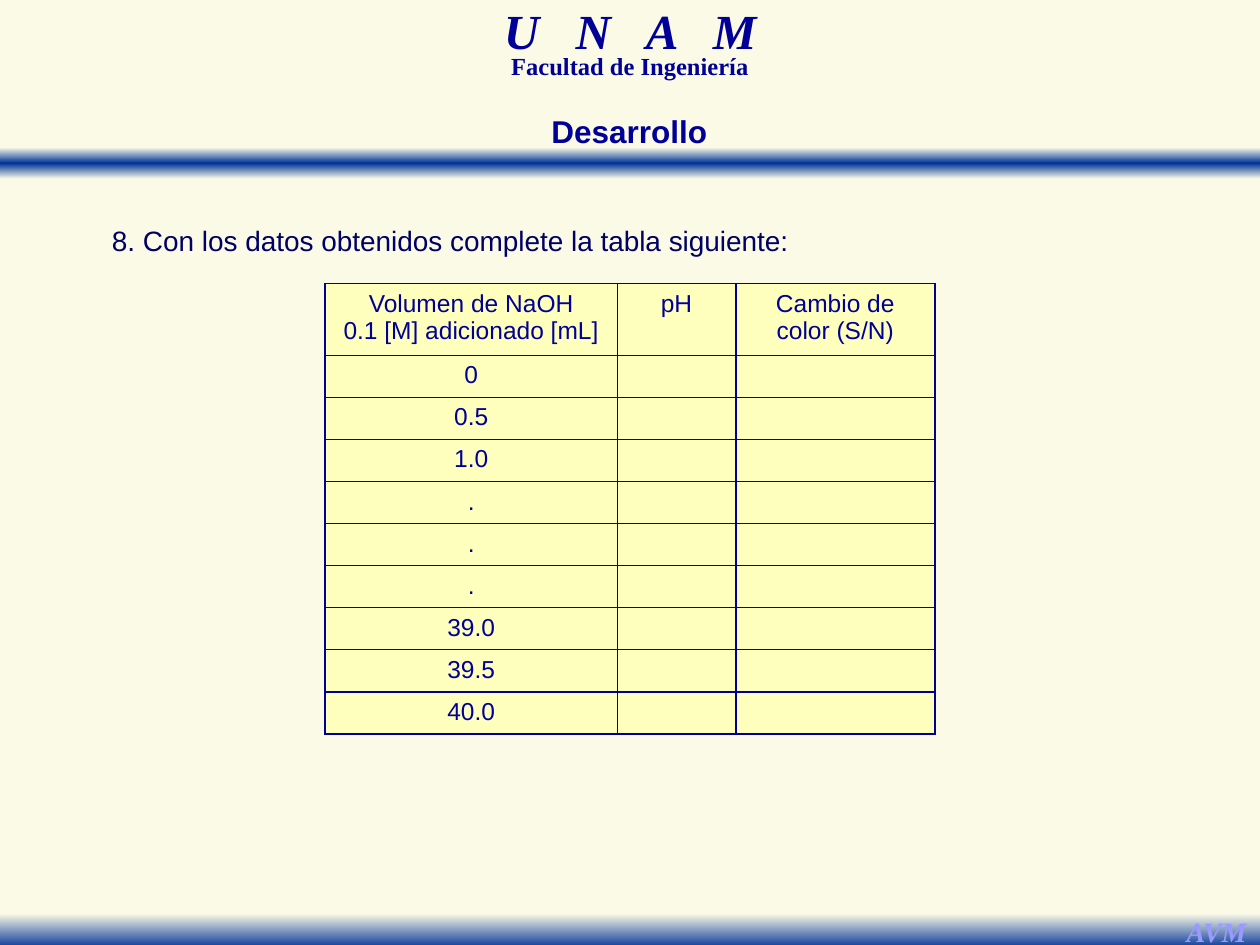
from dataclasses import dataclass

from lxml import etree
from pptx import Presentation
from pptx.dml.color import RGBColor
from pptx.enum.shapes import MSO_SHAPE
from pptx.enum.text import PP_ALIGN
from pptx.oxml.ns import qn
from pptx.util import Inches, Pt

RECTANGLE = MSO_SHAPE.RECTANGLE
CENTER = PP_ALIGN.CENTER
JUSTIFY = PP_ALIGN.JUSTIFY


@dataclass(frozen=True)
class Theme:
    background: str = "FAFAE6"
    band: str = "003399"
    heading: str = "000099"
    body: str = "000066"
    signature: str = "9999FF"
    cell: str = "FFFFBD"
    sans: str = "Arial"
    serif: str = "Times New Roman"
    school_size: int = 28
    title_size: int = 18
    body_size: int = 16
    small_size: int = 14
    border_width: float = 1


class SlideBuilder:
    def __init__(self, slide, theme):
        self.slide = slide
        self.theme = theme
        background = slide.background.fill
        background.solid()
        background.fore_color.rgb = RGBColor.from_string(theme.background)

    def run(self, paragraph, text, size, color, font, bold=False, italic=False, tracking=0):
        """Add one run; tracking is extra letter spacing in points."""
        run = paragraph.add_run()
        run.text = text
        run.font.size = Pt(size)
        run.font.name = font
        run.font.bold = bold
        run.font.italic = italic
        run.font.color.rgb = RGBColor.from_string(color)
        if tracking:
            run.font._element.set("spc", str(tracking * 100))

    def text(self, box, align=CENTER, line_spacing=None, wrap=True):
        """Add a text box and return its empty first paragraph."""
        frame = self.slide.shapes.add_textbox(*map(Inches, box)).text_frame
        frame.word_wrap = wrap
        paragraph = frame.paragraphs[0]
        paragraph.alignment = align
        if line_spacing:
            paragraph.line_spacing = line_spacing
        return paragraph

    def band(self, top, height, colors):
        """Add a full-width bar shaded downwards through evenly spaced colors."""
        bar = self.slide.shapes.add_shape(
            RECTANGLE, 0, Inches(top), Inches(10), Inches(height))
        bar.shadow.inherit = False
        bar.line.fill.background()
        bar.fill.gradient()
        bar.fill.gradient_angle = 270
        stops = bar._element.spPr.find(qn("a:gradFill")).find(qn("a:gsLst"))
        for stop in list(stops):
            stops.remove(stop)
        for index, color in enumerate(colors):
            position = 100000 * index // (len(colors) - 1)
            stop = etree.SubElement(stops, qn("a:gs"), pos=str(position))
            etree.SubElement(stop, qn("a:srgbClr"), val=color)

    def border(self, cell):
        properties = cell._tc.get_or_add_tcPr()
        for index, side in enumerate(("lnL", "lnR", "lnT", "lnB")):
            line = etree.Element(qn(f"a:{side}"), w=str(Pt(self.theme.border_width)))
            fill = etree.SubElement(line, qn("a:solidFill"))
            etree.SubElement(fill, qn("a:srgbClr"), val=self.theme.heading)
            properties.insert(index, line)

    def cell(self, cell, lines):
        theme = self.theme
        cell.fill.solid()
        cell.fill.fore_color.rgb = RGBColor.from_string(theme.cell)
        self.border(cell)
        frame = cell.text_frame
        for index, line in enumerate(lines):
            paragraph = frame.paragraphs[0] if index == 0 else frame.add_paragraph()
            paragraph.alignment = CENTER
            self.run(paragraph, line, theme.small_size, theme.heading, theme.sans)
        if not lines:
            # Keeps the empty row from growing to the default type size
            etree.SubElement(frame.paragraphs[0]._p, qn("a:endParaRPr"),
                             sz=str(theme.small_size * 100))

    def table(self, left, top, widths, heights, rows):
        table = self.slide.shapes.add_table(
            len(rows), len(widths), Inches(left), Inches(top),
            Inches(sum(widths)), Inches(sum(heights))).table
        table.first_row = False
        table.horz_banding = False
        for column, width in zip(table.columns, widths):
            column.width = Inches(width)
        for row, height, contents in zip(table.rows, heights, rows):
            row.height = Inches(height)
            for cell, lines in zip(row.cells, contents):
                self.cell(cell, lines)


def main():
    deck = Presentation()
    deck.slide_width, deck.slide_height = Inches(10), Inches(7.5)
    theme = Theme()
    builder = SlideBuilder(deck.slides.add_slide(deck.slide_layouts[6]), theme)

    builder.band(1.17, 0.25, [theme.background, theme.band, theme.background])
    builder.band(7.25, 0.28, [theme.background, theme.band])

    school = builder.text((3.04, 0.08, 3.92, 0.43), line_spacing=0.7)
    for letters, tracking in (("U N A ", 7), ("M", 0)):
        builder.run(school, letters, theme.school_size, theme.heading, theme.serif,
                    bold=True, italic=True, tracking=tracking)
    faculty = builder.text((3.21, 0.42, 3.58, 0.26), line_spacing=0.7)
    builder.run(faculty, "Facultad de Ingeniería", theme.small_size, theme.heading,
                theme.serif, bold=True)
    signature = builder.text((9.31, 7.21, 0.69, 0.37), wrap=False)
    builder.run(signature, "AVM", theme.body_size, theme.signature, theme.serif,
                bold=True, italic=True)

    title = builder.text((2.83, 0.84, 4.33, 0.4))
    builder.run(title, "Desarrollo", theme.title_size, theme.heading, theme.sans, bold=True)
    instruction = builder.text((0.79, 1.62, 8.43, 0.43), JUSTIFY, line_spacing=1.4)
    builder.run(instruction, "8. Con los datos obtenidos complete la tabla siguiente:",
                theme.body_size, theme.body, theme.sans)

    header = [["Volumen de NaOH", "0.1 [M] adicionado [mL]"], ["pH"],
              ["Cambio de color (S/N)"]]
    volumes = ["0", "0.5", "1.0", ".", ".", ".", "39.0", "39.5", "40.0"]
    rows = [header] + [[[volume], [], []] for volume in volumes]
    header_height, table_height = 0.57, 3.57
    row_height = (table_height - header_height) / len(volumes)
    builder.table(2.58, 2.25, [2.32, 0.94, 1.58],
                  [header_height] + [row_height] * len(volumes), rows)

    deck.save("out.pptx")


if __name__ == "__main__":
    main()
